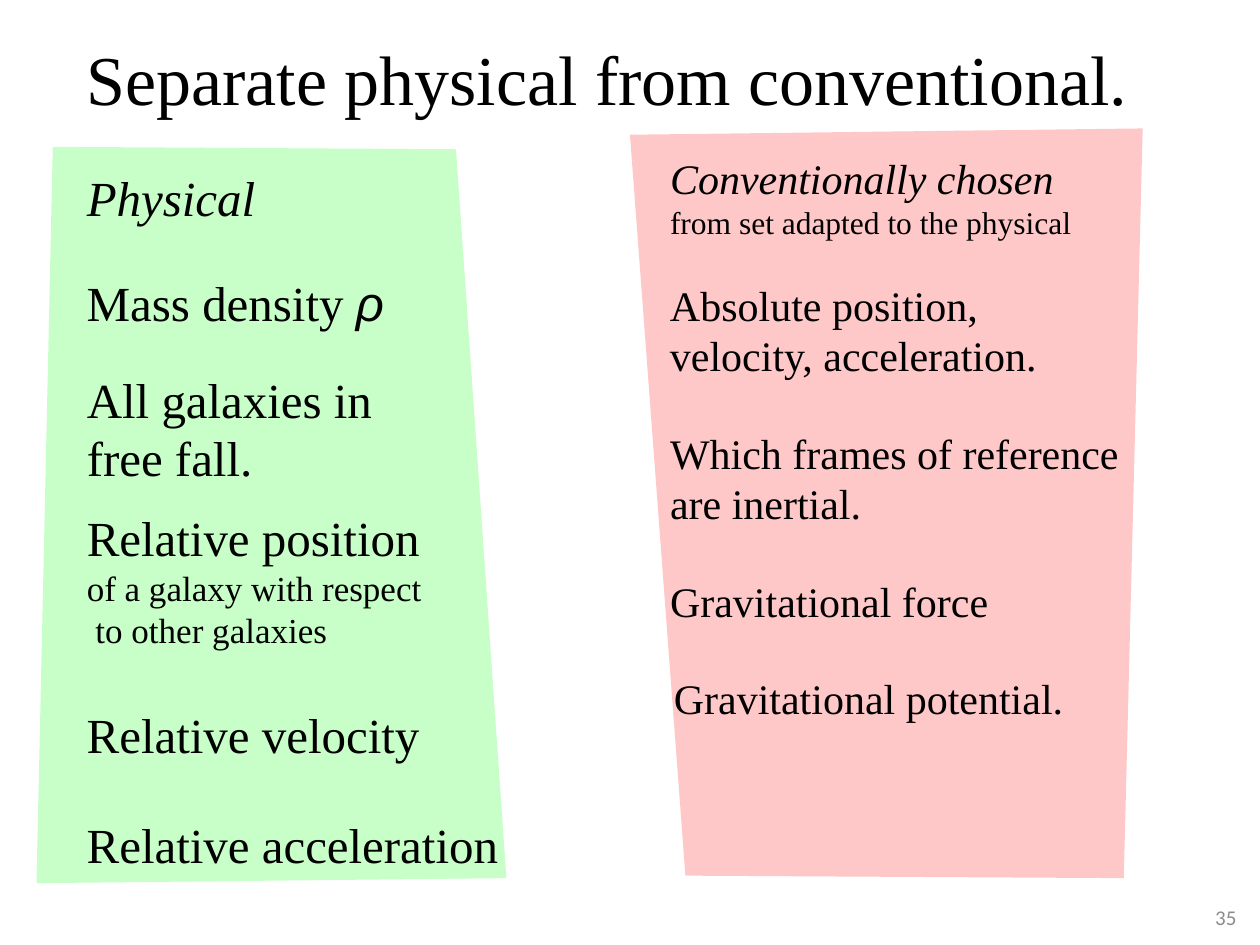
from pptx import Presentation
from pptx.dml.color import RGBColor
from pptx.enum.text import MSO_ANCHOR, MSO_AUTO_SIZE, PP_ALIGN
from pptx.util import Pt

COLORS = {"physical": "C8FFC8", "conventional": "FFC8C8", "text": "000000", "number": "8C8C8C"}
SERIF = "Times New Roman"


def add_panel(corners, color):
    points = [(Pt(x), Pt(y)) for x, y in corners]
    builder = slide.shapes.build_freeform(*points[0])
    builder.add_line_segments(points[1:], close=True)
    shape = builder.convert_to_shape()
    shape.shadow.inherit = False
    shape.fill.solid()
    shape.fill.fore_color.rgb = RGBColor.from_string(COLORS[color])
    shape.line.fill.background()


def add_text(box, lines, wrap=True, font=SERIF, color="text"):
    text_frame = slide.shapes.add_textbox(*map(Pt, box)).text_frame
    text_frame.word_wrap = wrap
    text_frame.text = "\n".join(text for text, size, italic in lines)
    for paragraph, (text, size, italic) in zip(text_frame.paragraphs, lines):
        for run in paragraph.runs:
            run.font.name = font
            run.font.size = Pt(size)
            run.font.italic = italic
            run.font.color.rgb = RGBColor.from_string(COLORS[color])
    return text_frame


presentation = Presentation()
presentation.slide_width = Pt(720)
presentation.slide_height = Pt(540)
slide = presentation.slides.add_slide(presentation.slide_layouts[6])

add_panel([(642.2, 501.8), (391.7, 500.4), (360, 77), (653, 73.4)], "conventional")
add_panel([(30.2, 83.9), (260.6, 85.3), (289.4, 501.8), (20.9, 504.7)], "physical")

title = add_text((42.5, 20.9, 620.6, 52.6), [("Separate physical from conventional.", 40, False)])
title.vertical_anchor = MSO_ANCHOR.MIDDLE
title.paragraphs[0].line_spacing = 0.9

number = add_text((686.2, 509.8, 27.4, 28.8), [("35", 12, False)], font="Calibri", color="number")
number.vertical_anchor = MSO_ANCHOR.MIDDLE
number.paragraphs[0].alignment = PP_ALIGN.RIGHT

relative_position = [
    ("Relative position", 28, False),
    ("of a galaxy with respect", 20, False),
    (" to other galaxies", 20, False),
]
physical_items = [
    (92.2, 111.6, 41, False, [("Physical", 28, True)]),
    (207.4, 207.4, 75, True, [("All galaxies in free fall.", 28, False)]),
    (286.6, 207.4, 90, False, relative_position),
    (398.9, 206.6, 41, False, [("Relative velocity", 28, False)]),
    (462.2, 252, 41, False, [("Relative acceleration", 28, False)]),
]
for top, width, height, wrap, lines in physical_items:
    text_frame = add_text((42.5, top, width, height), lines, wrap)
    text_frame.auto_size = MSO_AUTO_SIZE.SHAPE_TO_FIT_TEXT

density = add_text((42.5, 151.9, 185, 41), [("Mass density ", 28, False)], False)
density.auto_size = MSO_AUTO_SIZE.SHAPE_TO_FIT_TEXT
symbol = density.paragraphs[0].add_run()
symbol.text = "ρ"
symbol.font.name = "Arial"
symbol.font.size = Pt(28)
symbol.font.italic = True
symbol.font.color.rgb = RGBColor.from_string(COLORS["text"])

heading = [("Conventionally chosen", 24, True), ("from set adapted to the physical", 18, False)]
conventional_items = [
    (375.8, 83.5, 277.2, 58.3, heading),
    (375.8, 156.2, 264.2, 65.5, [("Absolute position, velocity, acceleration.", 24, False)]),
    (375.8, 240.5, 277.2, 65.5, [("Which frames of reference are inertial.", 24, False)]),
    (375.8, 325.4, 222.5, 36, [("Gravitational force", 24, False)]),
    (378, 380.9, 275, 36, [("Gravitational potential.", 24, False)]),
]
for left, top, width, height, lines in conventional_items:
    text_frame = add_text((left, top, width, height), lines)
    text_frame.auto_size = MSO_AUTO_SIZE.SHAPE_TO_FIT_TEXT

presentation.save("out.pptx")
